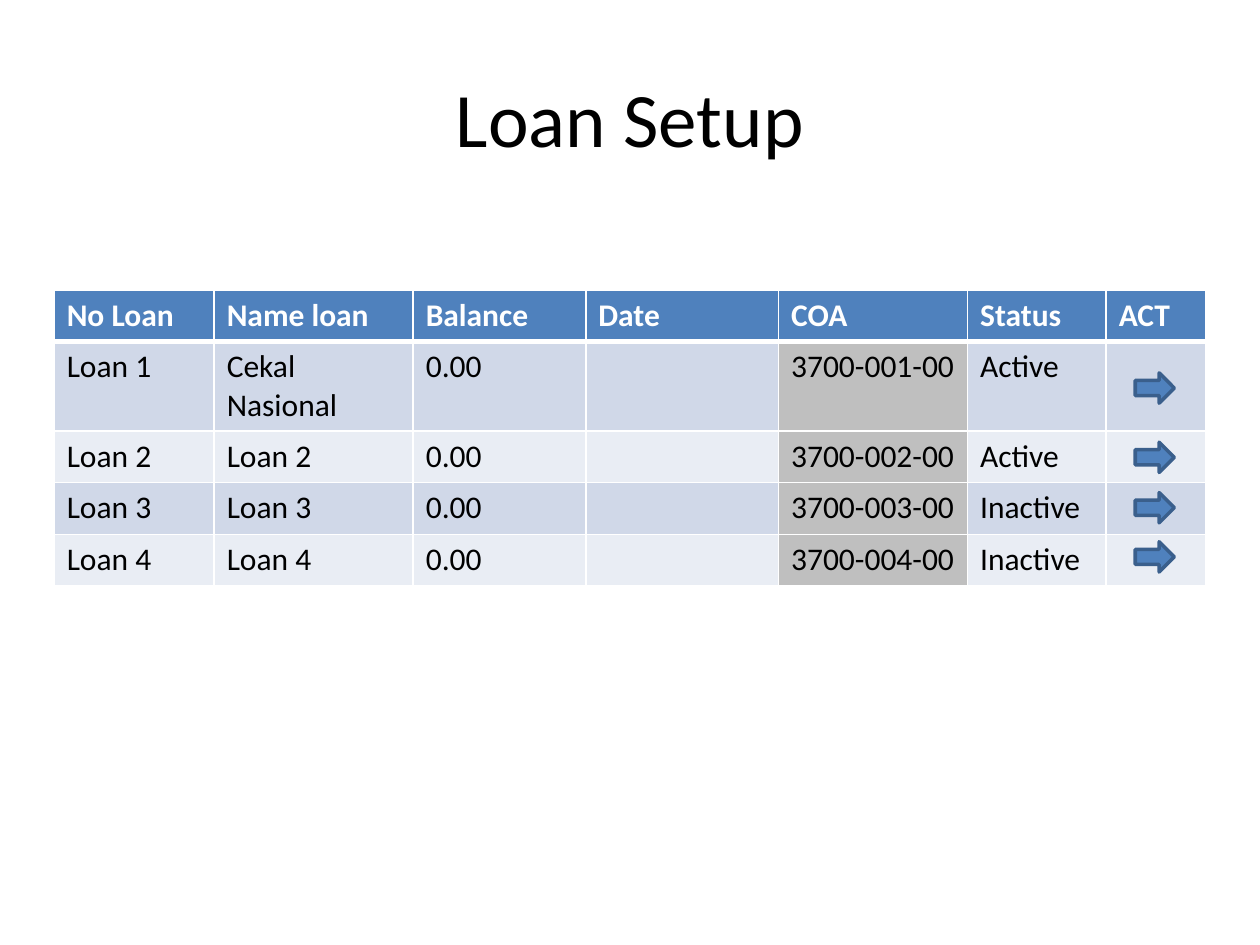
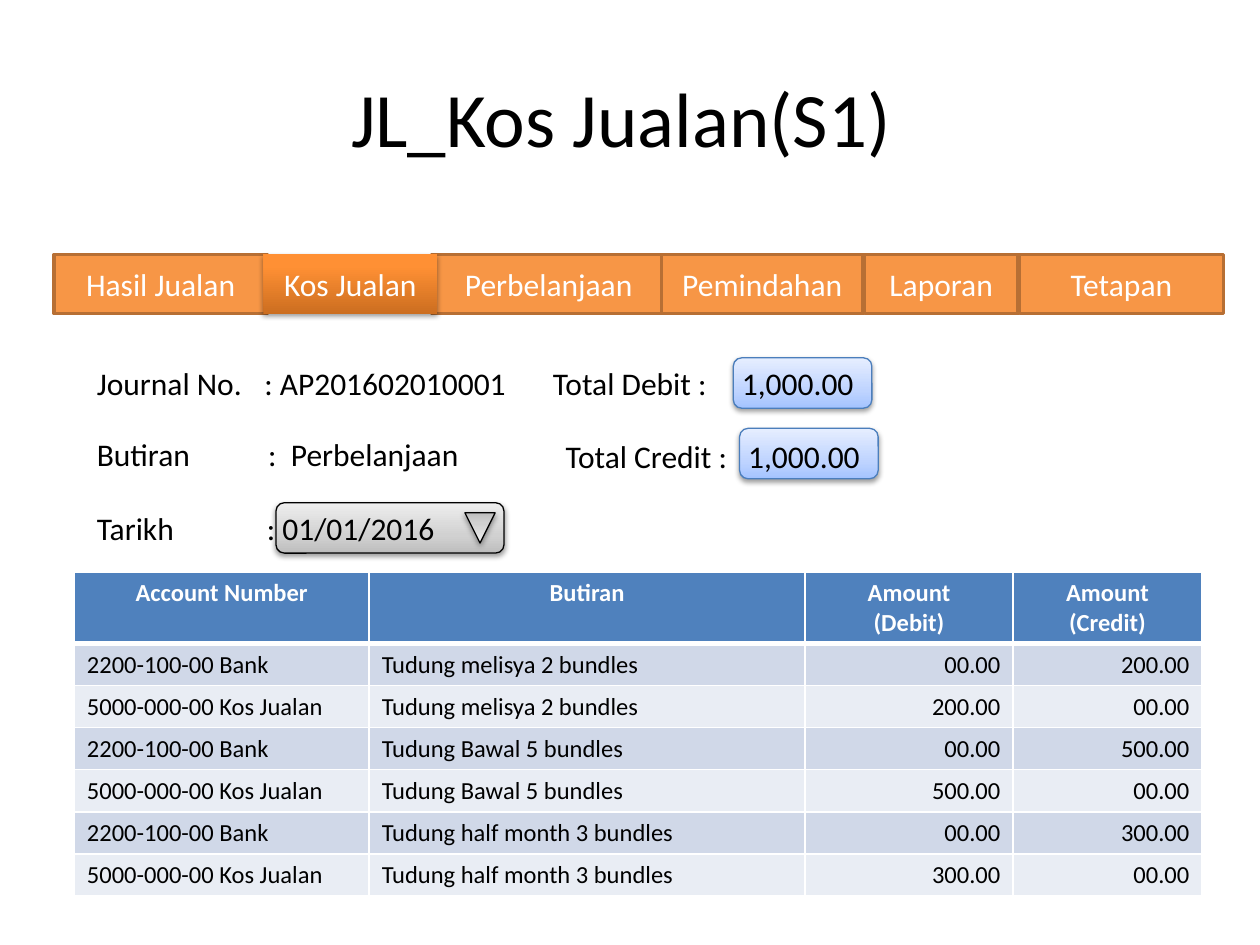
"""Build two accounting screens: the loan setup and the cost-of-sales journal."""
from lxml import etree
from pptx import Presentation
from pptx import util as u
from pptx.dml.color import RGBColor
from pptx.enum import shapes, text
from pptx.oxml import ns

EMU_PER_PX = 9144
FONT = "Calibri"
BLACK = RGBColor(0, 0, 0)
WHITE = RGBColor(255, 255, 255)
BLUE = RGBColor(0x4F, 0x81, 0xBD)
BLUE_EDGE = RGBColor(0x3A, 0x5F, 0x8C)
FIELD_EDGE = RGBColor(0x4B, 0x7E, 0xBC)
BANDS = (RGBColor(0xE9, 0xED, 0xF4), RGBColor(0xD0, 0xD8, 0xE8))
CODE_GREY = RGBColor(0xBF, 0xBF, 0xBF)
ORANGE = RGBColor(0xF7, 0x96, 0x46)
ORANGE_EDGE = RGBColor(0xB7, 0x6F, 0x34)

BLUE_FADE = ((0, RGBColor(0xA4, 0xC4, 0xFF)), (35, RGBColor(0xBF, 0xD4, 0xFF)),
             (100, RGBColor(0xE6, 0xEE, 0xFF)))
GREY_FADE = ((0, RGBColor(0xBD, 0xBD, 0xBD)), (35, RGBColor(0xD1, 0xD1, 0xD1)),
             (100, RGBColor(0xEE, 0xEE, 0xEE)))
ORANGE_FADE = ((0, RGBColor(0xCC, 0x6E, 0x20)), (80, RGBColor(0xFF, 0x90, 0x34)),
               (100, RGBColor(0xFF, 0x91, 0x36)))

LEFT, CENTER, RIGHT = text.PP_ALIGN.LEFT, text.PP_ALIGN.CENTER, text.PP_ALIGN.RIGHT
SHAPE = shapes.MSO_SHAPE


def px(*lengths):
    """Turn pixel lengths into EMU."""
    return [u.Emu(length * EMU_PER_PX) for length in lengths]


def add_element(parent, tag, **attributes):
    """Append a drawing element and return it."""
    values = {key: str(value) for key, value in attributes.items()}
    return etree.SubElement(parent, ns.qn(tag), values)


def add_color(parent, color, alpha=None):
    """Append an RGB colour, with an optional opacity in percent."""
    element = add_element(parent, "a:srgbClr", val=color)
    if alpha is not None:
        add_element(element, "a:alpha", val=alpha * 1000)


def write(frame, content, size=18, color=BLACK, bold=False, align=LEFT, tabs=()):
    """Fill a text frame, one paragraph for each line."""
    for index, line in enumerate(content.split("\n")):
        paragraph = frame.add_paragraph() if index else frame.paragraphs[0]
        paragraph.alignment = align
        if tabs:
            tab_list = add_element(paragraph._p.get_or_add_pPr(), "a:tabLst")
            for position in px(*tabs):
                add_element(tab_list, "a:tab", pos=position, algn="l")
        run = paragraph.add_run()
        run.text = line
        run.font.name, run.font.size, run.font.bold = FONT, u.Pt(size), bold
        run.font.color.rgb = color


class Deck:
    """Hold the presentation, its style and the current slide."""

    def __init__(self):
        """Start an empty 4:3 presentation."""
        self.presentation = Presentation()
        self.presentation.slide_width, self.presentation.slide_height = px(1000, 750)
        self.slide = None

    def add_slide(self, title):
        """Start a slide with a centred title."""
        self.slide = self.presentation.slides.add_slide(self.presentation.slide_layouts[5])
        shape = self.slide.shapes.title
        shape.left, shape.top, shape.width, shape.height = px(50, 30, 900, 125)
        shape.text_frame.vertical_anchor = text.MSO_ANCHOR.MIDDLE
        write(shape.text_frame, title, size=44, align=CENTER)

    def add_text(self, content, left, top, width, tabs):
        """Add one line of text with tab stops."""
        shape = self.slide.shapes.add_textbox(*px(left, top, width, 40))
        shape.text_frame.word_wrap = True
        write(shape.text_frame, content, tabs=tabs)

    def add_shape(self, kind, box, fill, edge=None, edge_width=2.0, label=""):
        """Add a preset shape with a plain fill."""
        shape = self.slide.shapes.add_shape(kind, *px(*box))
        shape.shadow.inherit = False
        shape.fill.solid()
        shape.fill.fore_color.rgb = fill
        if edge is None:
            shape.line.fill.background()
        else:
            shape.line.color.rgb = edge
            shape.line.width = u.Pt(edge_width)
        if label:
            shape.text_frame.vertical_anchor = text.MSO_ANCHOR.MIDDLE
            write(shape.text_frame, label, color=WHITE, align=CENTER)
        return shape

    def add_raised_shape(self, kind, box, fade, edge=None, label=""):
        """Add a preset shape with a vertical gradient and a soft shadow."""
        shape = self.add_shape(kind, box, fade[0][1], edge, 0.75, label)
        shape.fill.gradient()
        shape.fill.gradient_angle = 90
        properties = shape._element.spPr
        stops = properties.find(".//" + ns.qn("a:gsLst"))
        for stop in list(stops):
            stops.remove(stop)
        for position, color in fade:
            add_color(add_element(stops, "a:gs", pos=position * 1000), color)
        shadow = add_element(properties.find(ns.qn("a:effectLst")), "a:outerShdw",
                             blurRad=u.Pt(3.1), dist=u.Pt(1.6), dir=5400000, rotWithShape=0)
        add_color(shadow, BLACK, alpha=38)
        return shape

    def add_table(self, left, top, widths, row_height, rows, size=18,
                  header_align=LEFT, aligns=None, grey_column=None):
        """Add a banded table with white rules and a blue header."""
        frame = self.slide.shapes.add_table(
            len(rows), len(widths), *px(left, top, sum(widths), row_height * len(rows)))
        table = frame.table
        for column, width in zip(table.columns, px(*widths)):
            column.width = width
        for row_index, row in enumerate(rows):
            table.rows[row_index].height = px(row_height)[0]
            header = row_index == 0
            for column_index, content in enumerate(row):
                cell = table.cell(row_index, column_index)
                self.add_borders(cell, row_index)
                cell.fill.solid()
                if header:
                    cell.fill.fore_color.rgb = BLUE
                elif column_index == grey_column:
                    cell.fill.fore_color.rgb = CODE_GREY
                else:
                    cell.fill.fore_color.rgb = BANDS[row_index % 2]
                body_align = aligns[column_index] if aligns else LEFT
                if content:
                    write(cell.text_frame, content, size=size, bold=header,
                          color=WHITE if header else BLACK,
                          align=header_align if header else body_align)

    def add_borders(self, cell, row_index):
        """Draw white cell borders, heavier under the header."""
        heavy = {0: "a:lnB", 1: "a:lnT"}.get(row_index)
        properties = cell._tc.get_or_add_tcPr()
        for side in ("a:lnL", "a:lnR", "a:lnT", "a:lnB"):
            line = add_element(properties, side, w=u.Pt(3 if side == heavy else 1))
            add_color(add_element(line, "a:solidFill"), WHITE)


def build_loan_setup(deck):
    """Build the loan list with its action arrows."""
    deck.add_slide("Loan Setup")
    rows = [("No Loan", "Name loan", "Balance", "Date", "COA", "Status", "ACT")]
    loans = (("Cekal Nasional", "Active"), ("Loan 2", "Active"),
             ("Loan 3", "Inactive"), ("Loan 4", "Inactive"))
    for number, (name, status) in enumerate(loans, 1):
        rows.append((f"Loan {number}", name, "0.00", "", f"3700-00{number}-00", status, ""))
    deck.add_table(43, 230, (127, 158, 137, 153, 150, 110, 79), 41, rows, grey_column=4)
    for top in (296, 351, 391, 430):
        deck.add_shape(SHAPE.RIGHT_ARROW, (901, top, 31, 24), BLUE, BLUE_EDGE)


def build_sales_cost(deck):
    """Build the cost-of-sales journal form."""
    deck.add_slide("JL_Kos Jualan(S1) ")
    for left, top in ((582, 284), (587, 340)):
        deck.add_raised_shape(SHAPE.ROUNDED_RECTANGLE, (left, top, 110, 40),
                              BLUE_FADE, FIELD_EDGE)
    deck.add_raised_shape(SHAPE.ROUNDED_RECTANGLE, (219, 399, 181, 40), GREY_FADE, BLACK)
    date_arrow = deck.add_raised_shape(SHAPE.ISOSCELES_TRIANGLE, (369, 407, 24, 24),
                                       GREY_FADE, BLACK)
    date_arrow.rotation = 180

    for field in (("Journal No.\t: AP201602010001", 67, 284, 348, (133,)),
                  ("Butiran\t:\tPerbelanjaan", 67, 340, 312, (136, 154)),
                  ("Tarikh\t: 01/01/2016", 67, 399, 292, (135,)),
                  ("Total Debit :\t1,000.00", 429, 284, 262, (150,)),
                  ("Total Credit :\t1,000.00", 439, 342, 323, (145,))):
        deck.add_text(*field)

    rows = [("Account Number", "Butiran", "Amount\n(Debit)", "Amount\n(Credit)")]
    for item, amount in (("Tudung melisya 2 bundles", "200.00"),
                         ("Tudung Bawal 5 bundles", "500.00"),
                         ("Tudung half month 3 bundles", "300.00")):
        rows.append(("2200-100-00 Bank", item, "00.00", amount))
        rows.append(("5000-000-00 Kos Jualan", item, amount, "00.00"))
    deck.add_table(59, 454, (234, 346, 165, 150), 33, rows, size=14,
                   header_align=CENTER, aligns=(LEFT, LEFT, RIGHT, RIGHT))

    for label, left, width in (("Hasil Jualan", 43, 169), ("Perbelanjaan", 343, 185),
                               ("Laporan", 686, 122), ("Tetapan", 809, 162),
                               ("Pemindahan", 525, 160)):
        deck.add_shape(SHAPE.RECTANGLE, (left, 202, width, 47), ORANGE, ORANGE_EDGE,
                       label=label)
    deck.add_raised_shape(SHAPE.RECTANGLE, (209, 202, 138, 47), ORANGE_FADE,
                          label="Kos Jualan")


def main():
    """Build and save both slides."""
    deck = Deck()
    build_loan_setup(deck)
    build_sales_cost(deck)
    deck.presentation.save("out.pptx")


if __name__ == "__main__":
    main()
